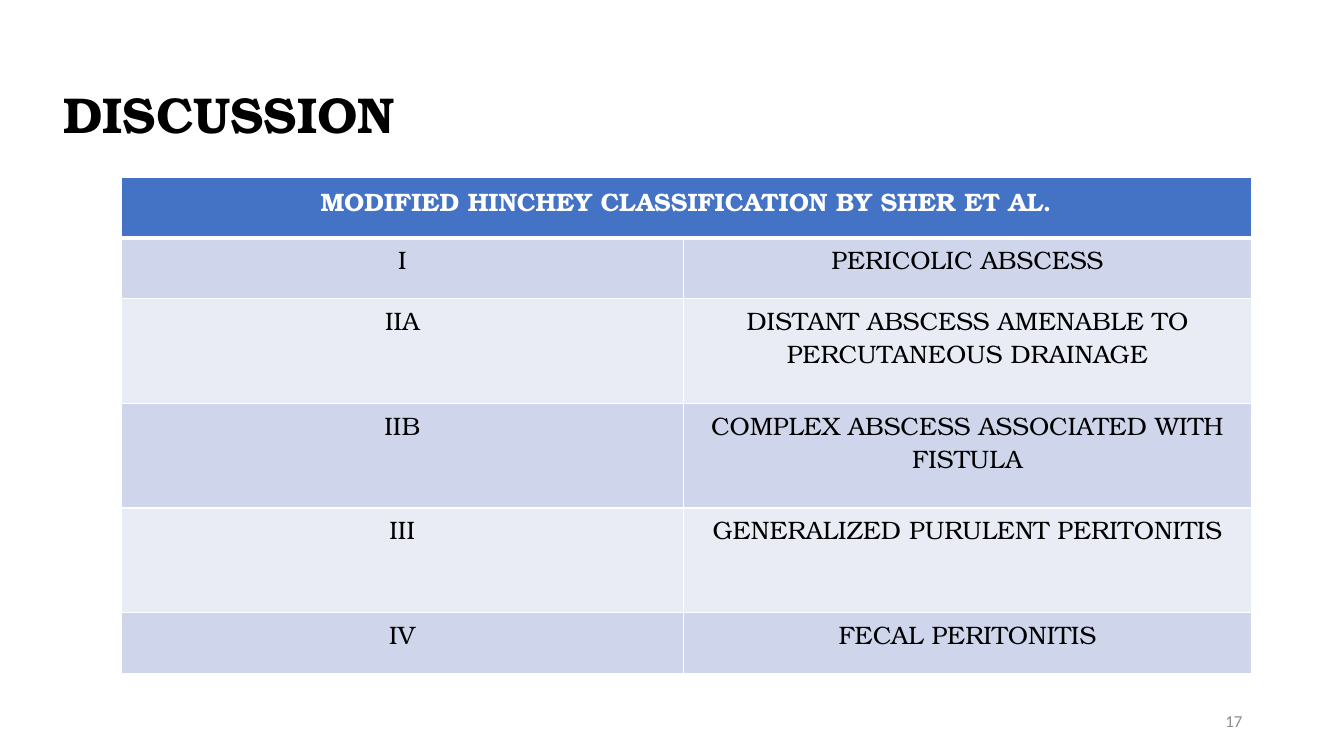
"""Build the discussion slide with the modified Hinchey classification table."""
from dataclasses import dataclass

from lxml import etree
from pptx import Presentation
from pptx.dml.color import RGBColor
from pptx.enum import text
from pptx.oxml import ns
from pptx.slide import Slide
from pptx.table import _Cell
from pptx.text.text import TextFrame
from pptx.util import Inches, Pt


@dataclass(frozen=True)
class Theme:
    serif: str = "TeX Gyre Bonum"
    sans: str = "Calibri"
    black: str = "000000"
    white: str = "FFFFFF"
    gray: str = "8C8C8C"
    header: str = "4472C4"
    bands: tuple[str, str] = ("CFD5EA", "E9EBF5")
    title_size: int = 36
    table_size: int = 18
    number_size: int = 12
    border: int = 1
    header_border: int = 3


@dataclass(frozen=True)
class TextStyle:
    font: str
    size: int
    color: str
    bold: bool = False
    align: text.PP_ALIGN = text.PP_ALIGN.CENTER


@dataclass(frozen=True)
class Label:
    wording: str
    left: float
    top: float
    width: float
    height: float
    style: TextStyle
    line_spacing: float = 1.0


@dataclass(frozen=True)
class Stage:
    name: str
    finding: str
    height: float


THEME = Theme()
HEADER_STYLE = TextStyle(THEME.serif, THEME.table_size, THEME.white, bold=True)
BODY_STYLE = TextStyle(THEME.serif, THEME.table_size, THEME.black)
LABELS = (
    Label("DISCUSSION", 0.53, 0.44, 11.5, 1.45,
          TextStyle(THEME.serif, THEME.title_size, THEME.black, True, text.PP_ALIGN.LEFT), 0.9),
    Label("17", 9.42, 6.95, 3, 0.4,
          TextStyle(THEME.sans, THEME.number_size, THEME.gray, False, text.PP_ALIGN.RIGHT)),
)
TABLE_TITLE = "MODIFIED HINCHEY CLASSIFICATION BY SHER ET AL."
HEADER_HEIGHT = 0.6
COLUMN_WIDTHS = (5.58, 5.63)
STAGES = (
    Stage("I", "PERICOLIC ABSCESS", 0.6),
    Stage("IIA", "DISTANT ABSCESS AMENABLE TO PERCUTANEOUS DRAINAGE", 1.04),
    Stage("IIB", "COMPLEX ABSCESS ASSOCIATED WITH FISTULA", 1.04),
    Stage("III", "GENERALIZED PURULENT PERITONITIS", 1.04),
    Stage("IV", "FECAL PERITONITIS", 0.6),
)


def write_text(frame: TextFrame, wording: str, style: TextStyle) -> None:
    """Fill a text frame with one styled paragraph."""
    frame.text = wording
    paragraph = frame.paragraphs[0]
    paragraph.alignment = style.align
    for run in paragraph.runs:
        run.font.name = style.font
        run.font.size = Pt(style.size)
        run.font.bold = style.bold
        run.font.color.rgb = RGBColor.from_string(style.color)


def add_label(slide: Slide, label: Label) -> None:
    """Add a text box with vertically centred text."""
    shape = slide.shapes.add_textbox(
        Inches(label.left), Inches(label.top), Inches(label.width), Inches(label.height))
    frame = shape.text_frame
    frame.word_wrap = True
    frame.vertical_anchor = text.MSO_ANCHOR.MIDDLE
    write_text(frame, label.wording, label.style)
    frame.paragraphs[0].line_spacing = label.line_spacing


def style_cell(cell: _Cell, fill: str, top: int, bottom: int) -> None:
    """Give a cell its fill and white borders."""
    properties = cell._tc.get_or_add_tcPr()
    widths = {"L": THEME.border, "R": THEME.border, "T": top, "B": bottom}
    for side, width in widths.items():
        line = etree.SubElement(properties, ns.qn(f"a:ln{side}"), w=str(Pt(width)))
        solid = etree.SubElement(line, ns.qn("a:solidFill"))
        etree.SubElement(solid, ns.qn("a:srgbClr"), val=THEME.white)
    cell.fill.solid()
    cell.fill.fore_color.rgb = RGBColor.from_string(fill)


def add_classification(slide: Slide) -> None:
    """Add the classification table with its merged header."""
    heights = (HEADER_HEIGHT, *(stage.height for stage in STAGES))
    table = slide.shapes.add_table(
        len(heights), len(COLUMN_WIDTHS), Inches(1.2), Inches(1.76),
        Inches(sum(COLUMN_WIDTHS)), Inches(sum(heights))).table
    for column, width in zip(table.columns, COLUMN_WIDTHS):
        column.width = Inches(width)
    for row, height in zip(table.rows, heights):
        row.height = Inches(height)

    table.cell(0, 0).merge(table.cell(0, 1))
    write_text(table.cell(0, 0).text_frame, TABLE_TITLE, HEADER_STYLE)
    for cell in table.rows[0].cells:
        style_cell(cell, THEME.header, THEME.border, THEME.header_border)

    for index, stage in enumerate(STAGES):
        top = THEME.border if index else THEME.header_border
        for column, wording in enumerate((stage.name, stage.finding)):
            cell = table.cell(index + 1, column)
            write_text(cell.text_frame, wording, BODY_STYLE)
            style_cell(cell, THEME.bands[index % 2], top, THEME.border)


def main() -> None:
    """Create and save the presentation."""
    presentation = Presentation()
    presentation.slide_width = Inches(13.33)
    presentation.slide_height = Inches(7.5)
    slide = presentation.slides.add_slide(presentation.slide_layouts[6])
    for label in LABELS:
        add_label(slide, label)
    add_classification(slide)
    presentation.save("out.pptx")


if __name__ == "__main__":
    main()
